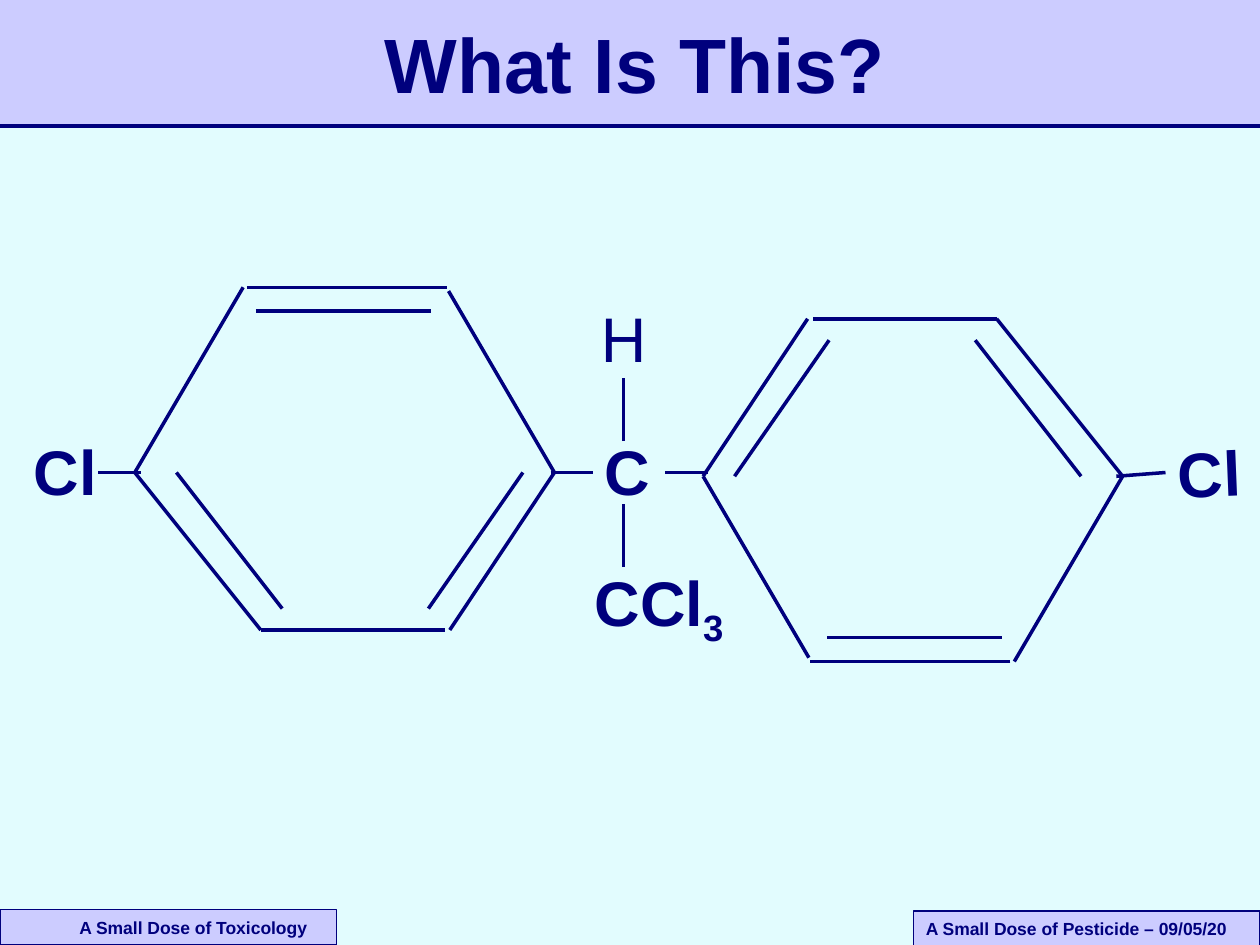
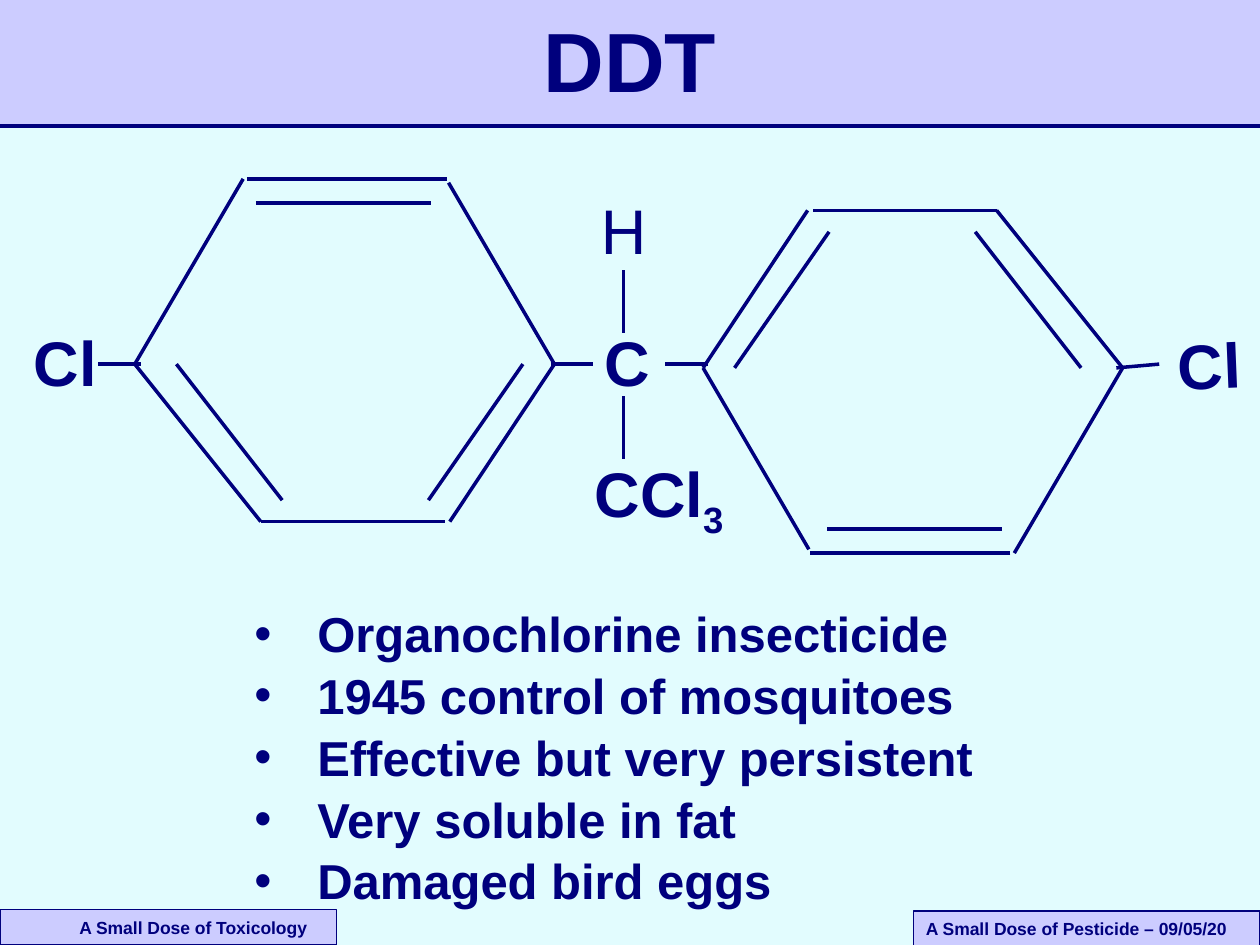
"""Two slides on the structure and the effects of DDT."""
import pptx
import pptx.util
import pptx.dml.color
import pptx.enum.shapes
import pptx.enum.text
import pptx.oxml.ns
from lxml import etree

NAVY = pptx.dml.color.RGBColor(0x00, 0x00, 0x7D)
LAVENDER = pptx.dml.color.RGBColor(0xCC, 0xCC, 0xFF)
PALE_CYAN = pptx.dml.color.RGBColor(0xE2, 0xFC, 0xFE)
FONT = "Arial"
CELL = pptx.util.Inches(1)
COLUMNS, ROWS = 10, 7.5
ANCHOR = pptx.enum.text.MSO_ANCHOR
ALIGN = pptx.enum.text.PP_ALIGN

RING_BONDS = [
    ((2.07, 1.25), (1.07, 0)), ((1.07, 0), (1.93, -1.47)),
    ((1.96, -1.47), (3.55, -1.47)), ((2.07, 1.25), (3.53, 1.25)),
    ((3.57, 1.25), (4.4, 0)), ((4.4, 0), (3.56, -1.44)),
    ((2.03, -1.28), (3.42, -1.28)), ((2.24, 1.08), (1.4, 0)),
    ((4.15, 0), (3.4, 1.08)),
]
CENTRE_BONDS = [
    ((0.78, 0), (1.12, 0)), ((4.37, 0), (4.71, 0)), ((5.28, 0), (5.62, 0)),
    ((4.95, -0.25), (4.95, -0.75)), ((4.95, 0.75), (4.95, 0.25)),
]
RIGHT_RING_DROP = 0.03
FACTS = ["Organochlorine insecticide", "1945 control of mosquitoes",
         "Effective but very persistent", "Very soluble in fat",
         "Damaged bird eggs"]


def cells(count):
    """Turn a number of grid cells into a length."""
    return round(count * CELL)


def style_runs(paragraph, size, bold=True):
    """Give every run of a paragraph the shared look."""
    for run in paragraph.runs:
        run.font.name = FONT
        run.font.size = pptx.util.Pt(size)
        run.font.bold = bold
        run.font.color.rgb = NAVY


def add_line(slide, start, end):
    """Draw a navy line between two grid points."""
    line = slide.shapes.add_connector(
        pptx.enum.shapes.MSO_CONNECTOR.STRAIGHT,
        *[cells(value) for value in (*start, *end)])
    line.line.color.rgb = NAVY
    line.line.width = pptx.util.Pt(2)
    etree.SubElement(line.element.spPr, pptx.oxml.ns.qn("a:effectLst"))


def add_band(slide, left, top, width, height):
    """Draw a lavender rectangle without outline."""
    band = slide.shapes.add_shape(
        pptx.enum.shapes.MSO_SHAPE.RECTANGLE,
        *[cells(value) for value in (left, top, width, height)])
    band.shadow.inherit = False
    band.fill.solid()
    band.fill.fore_color.rgb = LAVENDER
    band.line.fill.background()
    return band


def add_footer(slide, text, left, top, width, indent):
    """Draw an outlined footer box whose text starts at the indent."""
    footer = add_band(slide, left, top, width, 0.28)
    footer.line.color.rgb = NAVY
    footer.line.width = pptx.util.Pt(0.75)
    frame = footer.text_frame
    frame.margin_left = cells(indent)
    frame.margin_right = 0
    frame.vertical_anchor = ANCHOR.MIDDLE
    frame.text = text
    frame.paragraphs[0].alignment = ALIGN.LEFT
    style_runs(frame.paragraphs[0], 10)


def add_text(slide, lines, left, top, width, height, size, bold=True, wrap=False):
    """Place lines of text and return their box."""
    box = slide.shapes.add_textbox(
        *[cells(value) for value in (left, top, width, height)])
    box.text_frame.word_wrap = wrap
    box.text_frame.text = "\n".join(lines)
    for paragraph in box.text_frame.paragraphs:
        style_runs(paragraph, size, bold)
    return box


def add_bullets(slide, lines, left, top, width, height):
    """Place a bulleted list with a hanging indent."""
    box = add_text(slide, lines, left, top, width, height, 28)
    for paragraph in box.text_frame.paragraphs:
        paragraph.line_spacing = 1.05
        properties = paragraph._p.get_or_add_pPr()
        properties.set("marL", str(cells(0.5)))
        properties.set("indent", str(cells(-0.5)))
        etree.SubElement(properties, pptx.oxml.ns.qn("a:buFont"), typeface=FONT)
        etree.SubElement(properties, pptx.oxml.ns.qn("a:buChar"), char="•")


def add_molecule(slide, axis, chlorine_bond_end):
    """Draw the DDT structure around a horizontal axis."""
    for start, end in RING_BONDS + CENTRE_BONDS:
        add_line(slide, (start[0], axis + start[1]), (end[0], axis + end[1]))
    for bond in RING_BONDS:
        add_line(slide, *[(COLUMNS - 0.02 - x, axis + RIGHT_RING_DROP - y)
                          for x, y in bond])
    add_line(slide, (chlorine_bond_end, axis), (8.86, axis + RIGHT_RING_DROP))

    add_text(slide, ["Cl"], 0.17, axis - 0.37, 0.7, 0.7, 36)
    right_chlorine = add_text(slide, ["Cl"], 9.25, axis - 0.35, 0.7, 0.7, 36)
    right_chlorine.rotation = 357.7
    add_text(slide, ["C"], 4.7, axis - 0.37, 0.56, 0.7, 36)
    add_text(slide, ["H"], 4.67, axis - 1.42, 0.56, 0.7, 36, bold=False)
    trichloromethyl = add_text(slide, ["CCl"], 4.62, axis + 0.67, 1.25, 0.7, 36)
    formula = trichloromethyl.text_frame.paragraphs[0]
    subscript = formula.add_run()
    subscript.text = "3"
    style_runs(formula, 36)
    subscript.font._element.set("baseline", "-25000")


def add_slide(deck, title, left, top, width, height, size):
    """Add a slide with the title band and both footers."""
    slide = deck.slides.add_slide(deck.slide_layouts[6])
    slide.background.fill.solid()
    slide.background.fill.fore_color.rgb = PALE_CYAN
    add_band(slide, 0, 0, COLUMNS, 1)
    add_line(slide, (0, 1), (COLUMNS, 1))
    add_footer(slide, "A Small Dose of Toxicology", 0, 7.22, 2.67, 0.63)
    add_footer(slide, "A Small Dose of Pesticide – 09/05/20", 7.25, 7.23, 2.75, 0.1)
    heading = add_text(slide, [title], left, top, width, height, size, wrap=True)
    heading.text_frame.vertical_anchor = ANCHOR.MIDDLE
    heading.text_frame.paragraphs[0].alignment = ALIGN.CENTER
    return slide


def main():
    """Build and save both slides."""
    deck = pptx.Presentation()
    deck.slide_width, deck.slide_height = cells(COLUMNS), cells(ROWS)

    question = add_slide(deck, "What Is This?", 1, 0.08, 8.08, 0.83, 44)
    add_molecule(question, 3.75, 9.25)

    answer = add_slide(deck, "DDT", 0.25, 0.02, 9.5, 0.9, 48)
    add_molecule(answer, 2.89, 9.2)
    add_bullets(answer, FACTS, 1.92, 4.72, 5.92, 2.44)

    deck.save("out.pptx")


if __name__ == "__main__":
    main()
